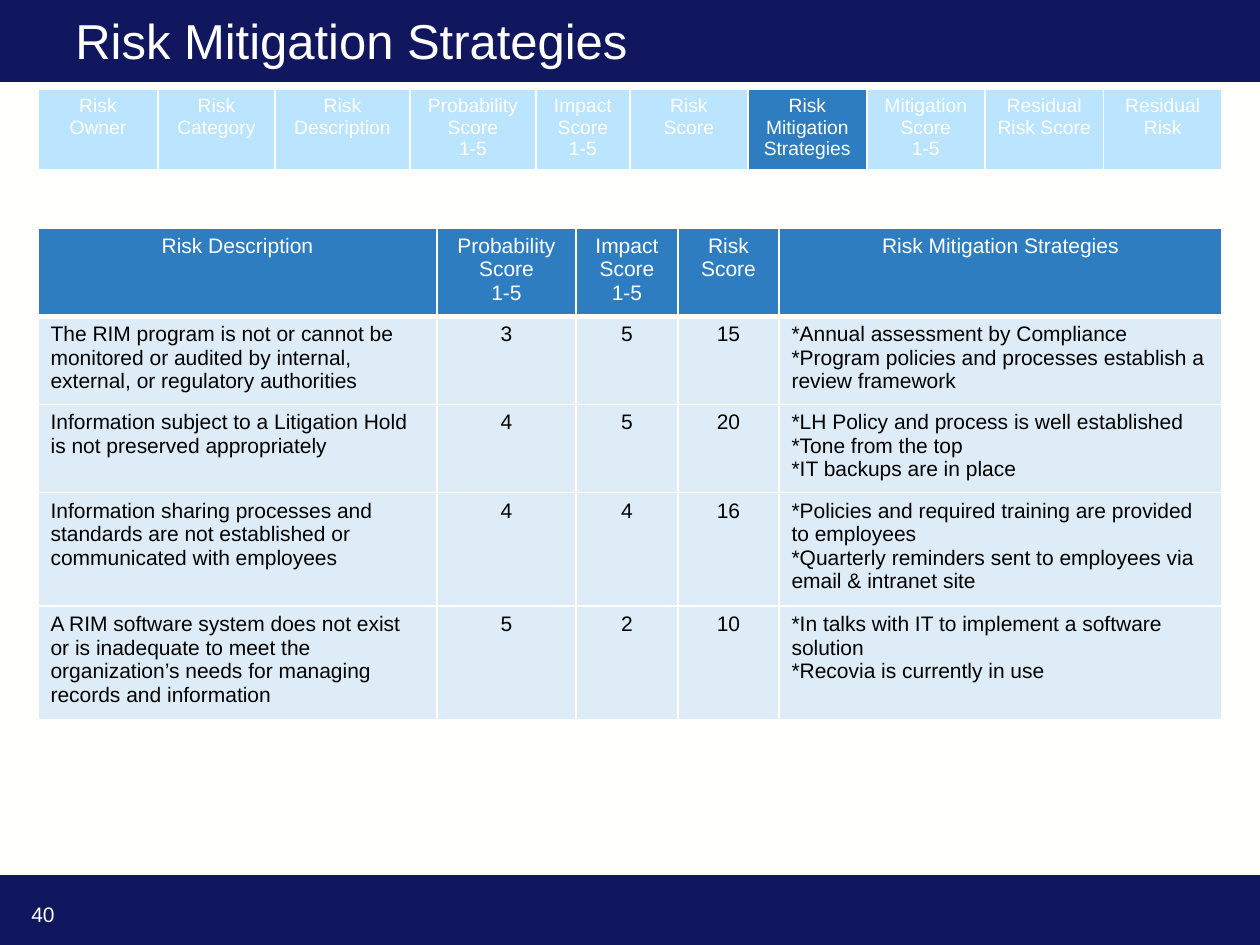
from dataclasses import dataclass

from lxml.etree import SubElement
from pptx import Presentation
from pptx.dml.color import RGBColor
from pptx.enum.shapes import MSO_SHAPE
from pptx.enum.text import MSO_ANCHOR, PP_ALIGN
from pptx.oxml.ns import qn
from pptx.slide import Slide
from pptx.table import _Cell
from pptx.text.text import TextFrame
from pptx.util import Emu, Pt

COLORS = {
    "paper": "FFFFFE",
    "navy": "11175E",
    "blue": "2F7DC1",
    "faded": "BBE4FF",
    "pale": "DDECF6",
    "ink": "000000",
}
FONT = "Arial"
PAGE_WIDTH, PAGE_HEIGHT = 1260, 945


@dataclass(frozen=True)
class Area:
    left: int
    top: int
    width: int
    height: int


@dataclass(frozen=True)
class Entry:
    text: str
    fill: str
    color: str = "paper"
    centered: bool = True
    bottom_border: int = 1


@dataclass(frozen=True)
class Grid:
    left: int
    top: int
    widths: list[int]
    heights: list[int]
    rows: list[list[Entry]]
    size: int


def px(length: int) -> Emu:
    return Emu(round(length * 914400 / 126))


def rgb(name: str) -> RGBColor:
    return RGBColor.from_string(COLORS[name])


def place(area: Area) -> tuple[Emu, Emu, Emu, Emu]:
    return px(area.left), px(area.top), px(area.width), px(area.height)


def write(frame: TextFrame, text: str, size: int, color: str, align: PP_ALIGN) -> None:
    frame.word_wrap = True
    para = frame.paragraphs[0]
    para.text = text.replace("\n", "\v")
    para.alignment = align
    para.font.name = FONT
    para.font.size = Pt(size)
    para.font.color.rgb = rgb(color)


def draw_band(page: Slide, area: Area) -> None:
    band = page.shapes.add_shape(MSO_SHAPE.RECTANGLE, *place(area))
    band.shadow.inherit = False
    band.fill.solid()
    band.fill.fore_color.rgb = rgb("navy")
    band.line.fill.background()


def draw_label(page: Slide, area: Area, text: str, size: int, anchor: MSO_ANCHOR) -> None:
    box = page.shapes.add_textbox(*place(area))
    box.text_frame.vertical_anchor = anchor
    write(box.text_frame, text, size, "paper", PP_ALIGN.LEFT)


def draw_borders(cell: _Cell, bottom: int) -> None:
    properties = cell._tc.get_or_add_tcPr()
    for index, (side, points) in enumerate((("L", 1), ("R", 1), ("T", 1), ("B", bottom))):
        line = SubElement(properties, qn(f"a:ln{side}"), w=str(Pt(points)))
        fill = SubElement(line, qn("a:solidFill"))
        SubElement(fill, qn("a:srgbClr"), val=COLORS["paper"])
        properties.insert(index, line)


def draw_grid(page: Slide, grid: Grid) -> None:
    area = Area(grid.left, grid.top, sum(grid.widths), sum(grid.heights))
    table = page.shapes.add_table(len(grid.heights), len(grid.widths), *place(area)).table
    for column, width in zip(table.columns, grid.widths):
        column.width = px(width)
    for row, height, entries in zip(table.rows, grid.heights, grid.rows):
        row.height = px(height)
        for cell, entry in zip(row.cells, entries):
            cell.fill.solid()
            cell.fill.fore_color.rgb = rgb(entry.fill)
            draw_borders(cell, entry.bottom_border)
            align = PP_ALIGN.CENTER if entry.centered else PP_ALIGN.LEFT
            write(cell.text_frame, entry.text, grid.size, entry.color, align)


TITLE = "Risk Mitigation Strategies"
STEPS = [
    "Risk Owner", "Risk Category", "Risk Description", "Probability Score\n1-5",
    "Impact Score\n1-5", "Risk Score", TITLE, "Mitigation Score\n1-5",
    "Residual Risk Score", "Residual Risk",
]
HEADINGS = STEPS[2:7]
RISKS = [
    ("The RIM program is not or cannot be monitored or audited by internal, "
     "external, or regulatory authorities", "3", "5", "15",
     "*Annual assessment by Compliance\n"
     "*Program policies and processes establish a review framework"),
    ("Information subject to a Litigation Hold is not preserved appropriately",
     "4", "5", "20",
     "*LH Policy and process is well established\n*Tone from the top\n"
     "*IT backups are in place"),
    ("Information sharing processes and standards are not established or "
     "communicated with employees", "4", "4", "16",
     "*Policies and required training are provided to employees\n"
     "*Quarterly reminders sent to employees via email & intranet site"),
    ("A RIM software system does not exist or is inadequate to meet the "
     "organization’s needs for managing records and information", "5", "2", "10",
     "*In talks with IT to implement a software solution\n"
     "*Recovia is currently in use"),
]

STEP_ROW = [
    Entry(step, "blue" if step == TITLE else "faded", bottom_border=3) for step in STEPS
]
HEADING_ROW = [Entry(heading, "blue", bottom_border=3) for heading in HEADINGS]
RISK_ROWS = [
    [Entry(text, "pale", "ink", centered=0 < column < 4) for column, text in enumerate(risk)]
    for risk in RISKS
]
GRIDS = [
    Grid(38, 89, [120, 117, 135, 126, 94, 118, 119, 118, 119, 118], [76], [STEP_ROW], 11),
    Grid(38, 228, [399, 139, 102, 101, 443], [82, 83, 83, 107, 107],
         [HEADING_ROW, *RISK_ROWS], 12),
]


def main() -> None:
    deck = Presentation()
    deck.slide_width, deck.slide_height = px(PAGE_WIDTH), px(PAGE_HEIGHT)
    page = deck.slides.add_slide(deck.slide_layouts[6])
    page.background.fill.solid()
    page.background.fill.fore_color.rgb = rgb("paper")
    draw_band(page, Area(0, 875, PAGE_WIDTH, 70))
    draw_band(page, Area(0, 0, PAGE_WIDTH, 82))
    draw_label(page, Area(63, 15, 1134, 50), TITLE, 28, MSO_ANCHOR.MIDDLE)
    draw_label(page, Area(19, 895, 339, 50), "40", 12, MSO_ANCHOR.TOP)
    for grid in GRIDS:
        draw_grid(page, grid)
    deck.save("out.pptx")


if __name__ == "__main__":
    main()
